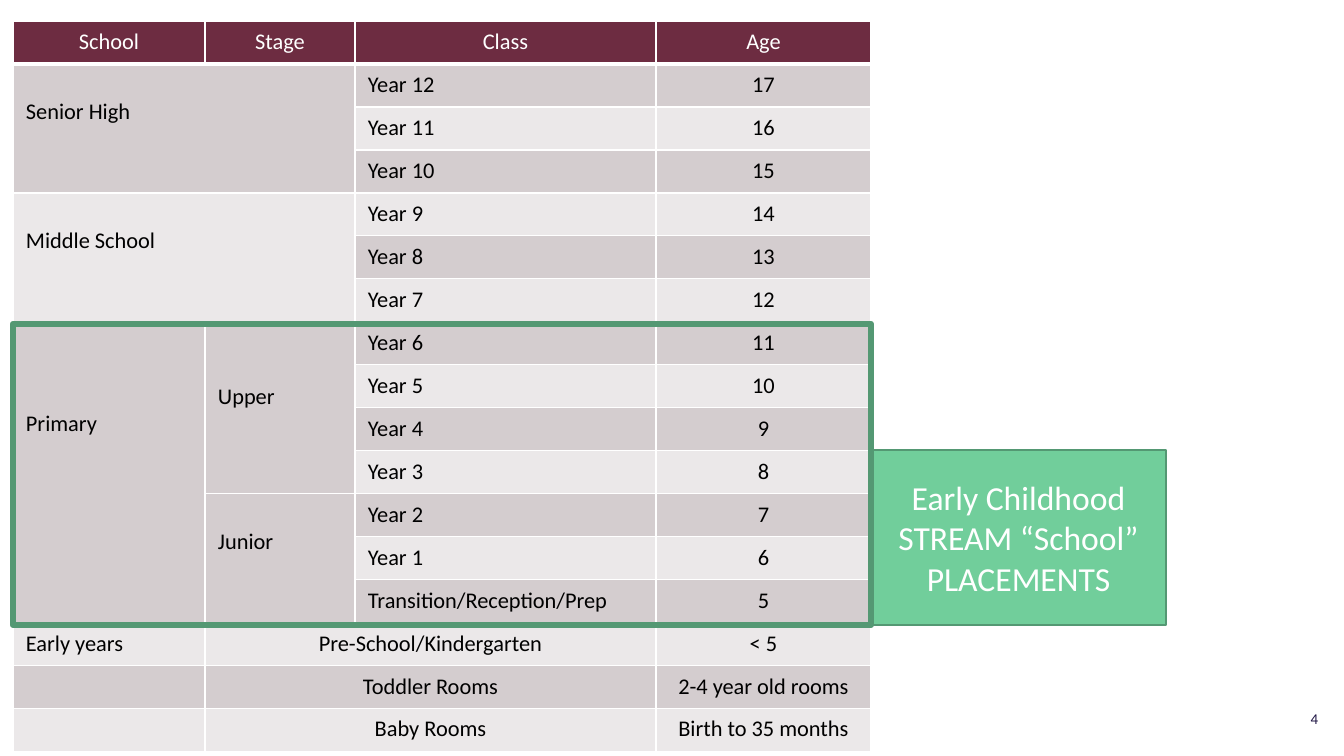
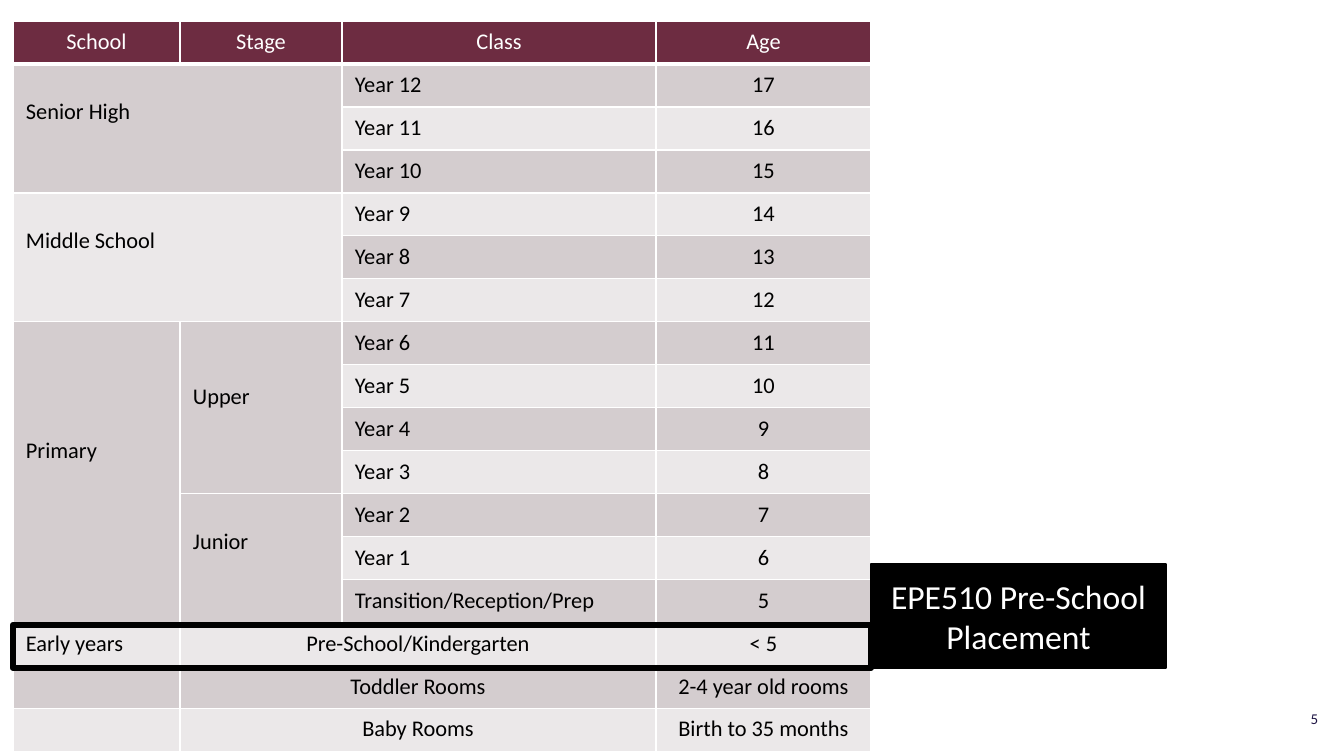
from lxml.etree import SubElement
from pptx import Presentation
from pptx.dml.color import RGBColor
from pptx.enum.shapes import MSO_SHAPE
from pptx.enum.text import MSO_ANCHOR, PP_ALIGN
from pptx.oxml.ns import qn
from pptx.util import Emu, Pt

EMU_PER_PX = 12192000 / 1344
FONT = "Calibri"
COLORS = {
    "white": "FFFFFF",
    "black": "000000",
    "header": "6D2C41",
    "dark_band": "D4CDCF",
    "light_band": "EBE8E9",
    "mint": "71CE9B",
    "green": "549873",
    "number": "201645",
}

TABLE_LEFT, TABLE_TOP, ROW_HEIGHT, LINE_HEIGHT = 13, 21, 43, 27
INSET_X, INSET_Y = 13, 7
CALLOUT_WIDTH = 295

HEADINGS = ["School", "Stage", "Class", "Age"]
CLASSES = [(f"Year {year}", str(year + 5)) for year in range(12, 0, -1)]
CLASSES.append(("Transition/Reception/Prep", "5"))
EARLY_YEARS = [
    ("Early years", "Pre-School/Kindergarten", "< 5"),
    ("", "Toddler Rooms", "2-4 year old rooms"),
    ("", "Baby Rooms", "Birth to 35 months"),
]


def px(length):
    """Turn a length in px into EMU."""
    return Emu(round(length * EMU_PER_PX))


def rgb(color):
    """Look up a named colour."""
    return RGBColor.from_string(COLORS[color])


class Deck:
    """Hold the shared style and the current slide."""

    def __init__(self):
        """Start an empty widescreen presentation."""
        self.presentation = Presentation()
        self.presentation.slide_width = px(1344)
        self.presentation.slide_height = px(756)
        self.slide = None

    def add_slide(self, number):
        """Add a blank slide with its number in the corner."""
        self.slide = self.presentation.slides.add_slide(self.presentation.slide_layouts[6])
        corner = self.slide.shapes.add_textbox(px(1277), px(699), px(51), px(40))
        corner.text_frame.word_wrap = True
        corner.text_frame.vertical_anchor = MSO_ANCHOR.MIDDLE
        self.add_text(corner.text_frame, str(number), 10.7, "number", PP_ALIGN.RIGHT)

    def add_text(self, frame, text, size, color, align):
        """Add one run to the first paragraph of a frame."""
        paragraph = frame.paragraphs[0]
        paragraph.alignment = align
        run = paragraph.add_run()
        run.text = text
        run.font.name = FONT
        run.font.size = Pt(size)
        run.font.bold = False
        run.font.color.rgb = rgb(color)

    def set_insets(self, holder, lines_above=0):
        """Set the insets of a cell or frame, lowered by whole lines."""
        holder.margin_left = holder.margin_right = px(INSET_X)
        holder.margin_top = px(INSET_Y + lines_above * LINE_HEIGHT)
        holder.margin_bottom = px(INSET_Y)

    def cell(self, cell, text, fill, color="black", align=PP_ALIGN.LEFT,
             lines_above=0, bottom_border=1):
        """Fill, border and label one table cell."""
        self.set_insets(cell, lines_above)
        properties = cell._tc.get_or_add_tcPr()
        for side, width in (("L", 1), ("R", 1), ("T", 1), ("B", bottom_border)):
            border = SubElement(properties, qn(f"a:ln{side}"), w=str(Pt(width)))
            solid = SubElement(border, qn("a:solidFill"))
            SubElement(solid, qn("a:srgbClr"), val=COLORS["white"])
        cell.fill.solid()
        cell.fill.fore_color.rgb = rgb(fill)
        if text:
            self.add_text(cell.text_frame, text, 16, color, align)
        else:
            SubElement(cell.text_frame.paragraphs[0]._p, qn("a:endParaRPr"), sz="1600")

    def school_table(self, column_widths, primary_lines):
        """Add the table of schools, stages, classes and ages."""
        row_count = 1 + len(CLASSES) + len(EARLY_YEARS)
        table = self.slide.shapes.add_table(
            row_count, len(HEADINGS), px(TABLE_LEFT), px(TABLE_TOP),
            px(sum(column_widths)), px(row_count * ROW_HEIGHT)).table
        table.first_row = table.horz_banding = False
        for column, width in zip(table.columns, column_widths):
            column.width = px(width)
        for row in table.rows:
            row.height = px(ROW_HEIGHT)

        def band(row):
            """Choose the shade of a body row."""
            return "dark_band" if row % 2 else "light_band"

        for column, heading in enumerate(HEADINGS):
            self.cell(table.cell(0, column), heading, "header", "white",
                      PP_ALIGN.CENTER, bottom_border=3)
        groups = [
            ("Senior High", 1, 0, 3, 2, 1),
            ("Middle School", 4, 0, 3, 2, 1),
            ("Primary", 7, 0, 7, 1, primary_lines),
            ("Upper", 7, 1, 4, 1, 2),
            ("Junior", 11, 1, 3, 1, 1),
        ]
        for name, row, column, rows, columns, lines_above in groups:
            group = table.cell(row, column)
            group.merge(table.cell(row + rows - 1, column + columns - 1))
            self.cell(group, name, band(row), lines_above=lines_above)
        for row, (class_name, age) in enumerate(CLASSES, 1):
            self.cell(table.cell(row, 2), class_name, band(row))
            self.cell(table.cell(row, 3), age, band(row), align=PP_ALIGN.CENTER)
        for row, (school, room, age) in enumerate(EARLY_YEARS, 1 + len(CLASSES)):
            table.cell(row, 1).merge(table.cell(row, 2))
            self.cell(table.cell(row, 0), school, band(row))
            self.cell(table.cell(row, 1), room, band(row), align=PP_ALIGN.CENTER)
            self.cell(table.cell(row, 3), age, band(row), align=PP_ALIGN.CENTER)

    def rectangle(self, left, top, width, height, line, line_width, fill=None):
        """Add a flat rectangle, hollow unless a fill is given."""
        rectangle = self.slide.shapes.add_shape(
            MSO_SHAPE.RECTANGLE, px(left), px(top), px(width), px(height))
        rectangle.shadow.inherit = False
        rectangle.line.color.rgb = rgb(line)
        rectangle.line.width = Pt(line_width)
        if fill:
            rectangle.fill.solid()
            rectangle.fill.fore_color.rgb = rgb(fill)
        else:
            rectangle.fill.background()
        return rectangle

    def highlight(self, top, height, table_width, text, callout_height, fill, line):
        """Frame some table rows and add a callout level with their bottom."""
        callout = self.rectangle(TABLE_LEFT + table_width, top + height - callout_height,
                                 CALLOUT_WIDTH, callout_height, line, 1, fill)
        frame = callout.text_frame
        frame.word_wrap = True
        frame.vertical_anchor = MSO_ANCHOR.MIDDLE
        self.set_insets(frame)
        self.add_text(frame, text, 24, "white", PP_ALIGN.CENTER)
        self.rectangle(TABLE_LEFT, top, table_width, height, line, 4.5)


def main():
    """Build and save both slides."""
    deck = Deck()

    stream_columns = [192, 150, 301, 215]
    deck.add_slide(4)
    deck.school_table(stream_columns, primary_lines=3)
    deck.highlight(324, 301, sum(stream_columns),
                   "Early Childhood STREAM “School” PLACEMENTS", 175, "mint", "green")

    preschool_columns = [167, 162, 314, 215]
    deck.add_slide(5)
    deck.school_table(preschool_columns, primary_lines=4)
    deck.highlight(625, ROW_HEIGHT, sum(preschool_columns),
                   "EPE510 Pre-School Placement", 104, "black", "black")

    deck.presentation.save("out.pptx")


if __name__ == "__main__":
    main()
